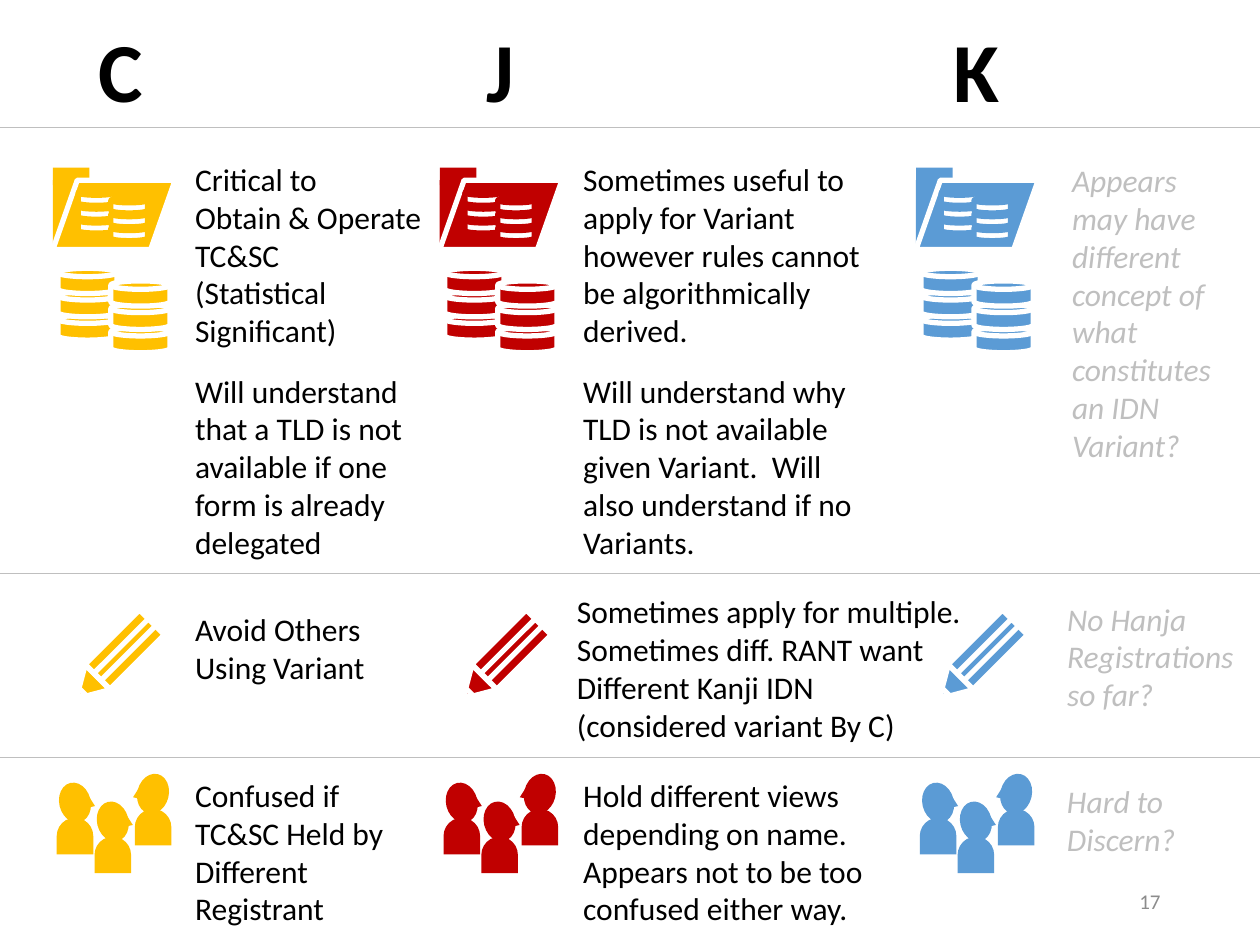
import pptx
import pptx.dml.color
import pptx.enum.shapes
import pptx.enum.text
import pptx.oxml.ns
import pptx.oxml.xmlchemy
import pptx.util
from lxml import etree

Inches = pptx.util.Inches
Pt = pptx.util.Pt
RGBColor = pptx.dml.color.RGBColor
Shape = pptx.enum.shapes.MSO_SHAPE
qn = pptx.oxml.ns.qn

AMBER = RGBColor(0xFF, 0xC0, 0x00)
RED = RGBColor(0xC0, 0x00, 0x00)
BLUE = RGBColor(0x5B, 0x9B, 0xD5)
BLACK = RGBColor(0x00, 0x00, 0x00)
WHITE = RGBColor(0xFF, 0xFF, 0xFF)
SILVER = RGBColor(0xBF, 0xBF, 0xBF)
GRAY = RGBColor(0x8C, 0x8C, 0x8C)

FONT = "Calibri"
SLIDE_WIDTH, SLIDE_HEIGHT = 10, 7.5
DIVIDER_TOPS = (1.01, 4.55, 6.01)

# Each column: colour, left edge of its icons
COLUMNS = ((BLUE, 7.27), (RED, 3.49), (AMBER, 0.42))

# Each heading: letter, left, width
HEADINGS = (("C", 0.68, 0.56), ("J", 3.76, 0.42), ("K", 7.47, 0.57))

# Each note: box (left, top, width, height), wraps, lines
NOTES = (
    ((1.45, 1.22, 2.04, 1.62), True,
     ("Critical to", "Obtain & Operate TC&SC", "(Statistical Significant)")),
    ((1.45, 2.9, 2.14, 1.62), True,
     ("Will understand that a TLD is not available if one form is already delegated",)),
    ((1.45, 4.79, 1.56, 0.71), False, ("Avoid Others", "Using Variant")),
    ((1.45, 6.11, 1.71, 1.31), False,
     ("Confused if", "TC&SC Held by", "Different", "Registrant")),
    ((4.53, 1.22, 2.42, 1.62), True,
     ("Sometimes useful to apply for Variant however rules cannot be "
      "algorithmically derived.",)),
    ((4.53, 2.9, 2.4, 1.62), True,
     ("Will understand why TLD is not available given Variant.  Will also "
      "understand if no Variants.",)),
    ((4.48, 4.65, 3.29, 1.31), False,
     ("Sometimes apply for multiple.", "Sometimes diff. RANT want",
      "Different Kanji IDN", "(considered variant By C)")),
    ((4.53, 6.11, 2.45, 1.31), False,
     ("Hold different views", "depending on name.", "Appears not to be too",
      "confused either way.")),
)
OPEN_QUESTIONS = (
    ((8.41, 1.23, 1.48, 2.52), True,
     ("Appears may have different concept of what constitutes an IDN Variant?",)),
    ((8.37, 4.71, 1.52, 1.01), False, ("No Hanja", "Registrations", "so far?")),
    ((8.37, 6.16, 1.07, 0.71), False, ("Hard to", "Discern?")),
)


def add_part(group, kind, box, fill, line=None, rotation=0, flipped=False):
    part = group.shapes.add_shape(kind, *(Inches(length) for length in box))
    part.shadow.inherit = False
    part.fill.solid()
    part.fill.fore_color.rgb = fill
    if line is None:
        part.line.fill.background()
    else:
        part.line.color.rgb = line
        part.line.width = Pt(3)
    part.rotation = rotation
    if flipped:
        part.element.spPr.find(qn("a:xfrm")).set("flipH", "1")


def add_person(group, left, top, color, faces_left=False):
    turn = -1 if faces_left else 1
    nose_left = left if faces_left else left + 0.2
    parts = (
        (Shape.FLOWCHART_DELAY, (left, top + 0.28, 0.29, 0.29), 270),
        (Shape.OVAL, (left + 0.02, top, 0.25, 0.32), 346.3),
        (Shape.ISOSCELES_TRIANGLE, (nose_left, top + 0.07, 0.09, 0.13), 346.6),
    )
    for kind, box, rotation in parts:
        add_part(group, kind, box, color, rotation=turn * rotation % 360,
                 flipped=faces_left)


def add_people(page, left, top, color):
    group = page.shapes.add_group_shape()
    add_person(group, left, top + 0.07, color)
    add_person(group, left + 0.3, top + 0.22, color)
    add_person(group, left + 0.62, top, color, faces_left=True)


def add_stack(group, box, rise, fill, line):
    """Pile three disks from the bottom up; box is the top disk."""
    left, top, width, height = box
    for level in (2, 1, 0):
        add_part(group, Shape.FLOWCHART_MAGNETIC_DISK,
                 (left, top + level * rise, width, height), fill, line)


def add_coins(page, left, top, color):
    group = page.shapes.add_group_shape()
    for across, down in ((0, 0), (0.42, 0.1)):
        add_stack(group, (left + across, top + down, 0.47, 0.2), 0.37 / 2, color, WHITE)


def add_pencil(page, left, top, color):
    group = page.shapes.add_group_shape()
    parts = (
        (Shape.ISOSCELES_TRIANGLE, (left, top + 0.49, 0.28, 0.24)),
        (Shape.RECTANGLE, (left + 0.3, top, 0.28, 0.61)),
        (Shape.ISOSCELES_TRIANGLE, (left + 0.04, top + 0.63, 0.08, 0.07)),
        (Shape.RECTANGLE, (left + 0.4, top, 0.08, 0.61)),
    )
    for kind, box in parts:
        add_part(group, kind, box, color, WHITE, rotation=225)


def add_folder(page, left, top, color):
    group = page.shapes.add_group_shape()
    add_part(group, Shape.RECTANGLE, (left, top + 0.1, 0.77, 0.56), color)
    add_part(group, Shape.RECTANGLE, (left, top, 0.29, 0.14), color)
    add_part(group, Shape.FLOWCHART_DATA, (left, top + 0.1, 0.97, 0.55), color, WHITE)
    for across, down in ((0.2, 0.18), (0.46, 0.24)):
        add_stack(group, (left + across, top + down, 0.29, 0.12), 0.11, WHITE, color)


def add_icon_column(page, left, color):
    add_people(page, left + 0.03, 6.14, color)
    add_coins(page, left + 0.04, 2.13, color)
    add_pencil(page, left + 0.13, 4.85, color)
    add_folder(page, left, 1.33, color)


def add_text(page, box, lines, size=18, color=BLACK, wraps=False, bold=False, italic=False):
    text_box = page.shapes.add_textbox(*(Inches(length) for length in box))
    frame = text_box.text_frame
    frame.text = "\n".join(lines)
    frame.word_wrap = wraps
    frame.auto_size = pptx.enum.text.MSO_AUTO_SIZE.SHAPE_TO_FIT_TEXT
    for para in frame.paragraphs:
        for span in para.runs:
            span.font.name = FONT
            span.font.size = Pt(size)
            span.font.bold = bold
            span.font.italic = italic
            span.font.color.rgb = color
    return frame


def add_divider(page, top):
    divider = page.shapes.add_connector(
        pptx.enum.shapes.MSO_CONNECTOR.STRAIGHT,
        Inches(0), Inches(top), Inches(SLIDE_WIDTH), Inches(top))
    divider.line.color.rgb = SILVER
    divider.line.width = Pt(0.5)
    etree.SubElement(divider.element.spPr, qn("a:effectLst"))


def add_page_number(page, box, number):
    frame = add_text(page, box, (number,), size=12, color=GRAY, wraps=True)
    frame.auto_size = pptx.enum.text.MSO_AUTO_SIZE.NONE
    frame.vertical_anchor = pptx.enum.text.MSO_ANCHOR.MIDDLE
    frame.paragraphs[0].alignment = pptx.enum.text.PP_ALIGN.RIGHT


def main():
    deck = pptx.Presentation()
    deck.slide_width = Inches(SLIDE_WIDTH)
    deck.slide_height = Inches(SLIDE_HEIGHT)
    page = deck.slides.add_slide(deck.slide_layouts[6])

    for color, left in COLUMNS:
        add_icon_column(page, left, color)
    for letter, left, width in HEADINGS:
        add_text(page, (left, 0.1, width, 0.91), (letter,), size=48, bold=True)
    for box, wraps, lines in NOTES:
        add_text(page, box, lines, wraps=wraps)
    for top in DIVIDER_TOPS:
        add_divider(page, top)
    for box, wraps, lines in OPEN_QUESTIONS:
        add_text(page, box, lines, color=SILVER, wraps=wraps, italic=True)
    add_page_number(page, (7.06, 6.95, 2.25, 0.4), "17")

    deck.save("out.pptx")


if __name__ == "__main__":
    main()
